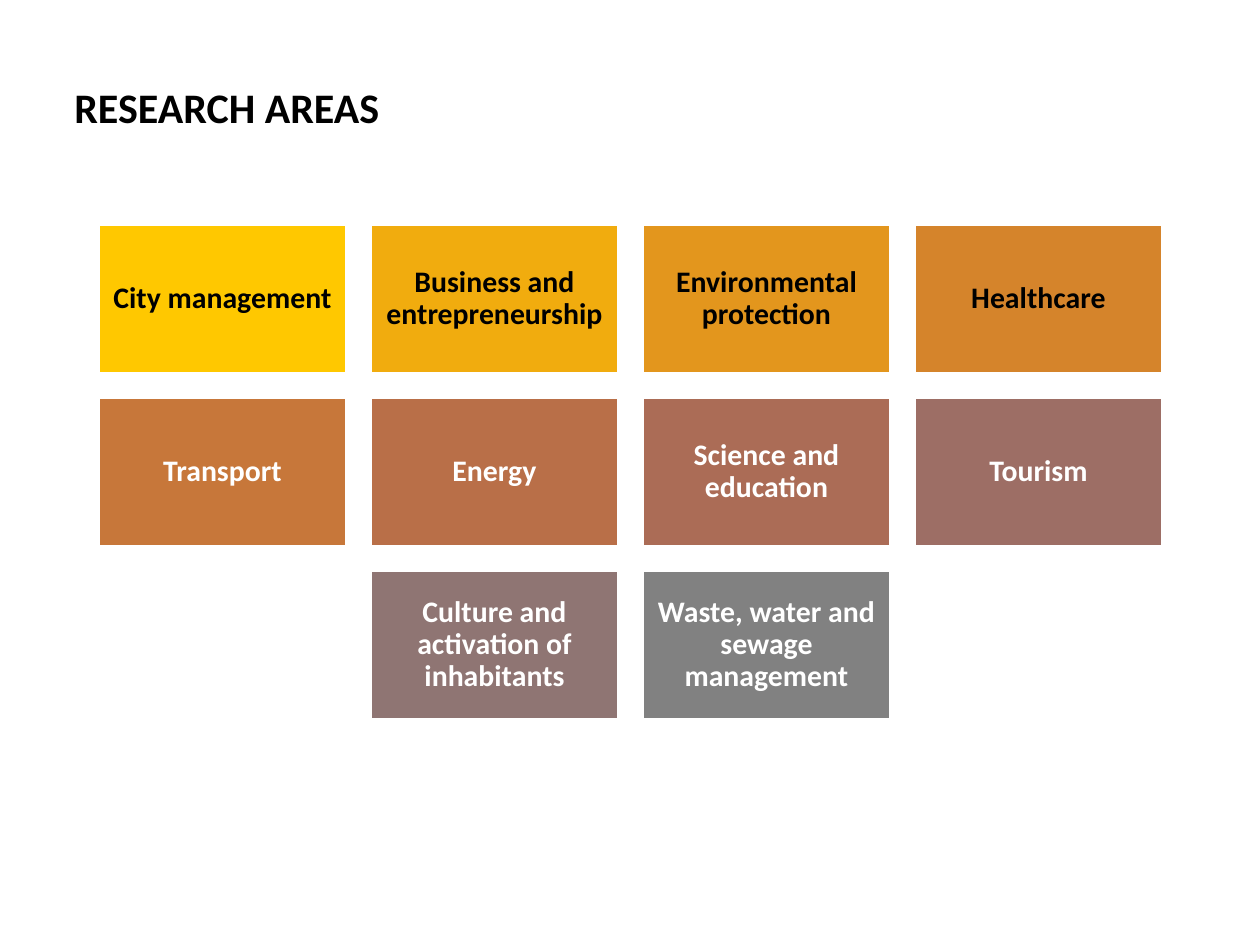
from pptx import Presentation
from pptx.dml.color import RGBColor
from pptx.enum.shapes import MSO_SHAPE
from pptx.enum.text import MSO_ANCHOR, PP_ALIGN
from pptx.util import Emu, Pt

PX = 914400 // 126
COLORS = {"black": "000000", "white": "FFFFFF"}
COLUMNS = 4
LEFT, TOP = 99, 225
CARD_W, CARD_H = 247, 148
STEP_X, STEP_Y = 272, 173
INSET = 9

AREAS = [
    ("City management", "FFC800", "black"),
    ("Business and entrepreneurship", "F1AC0E", "black"),
    ("Environmental protection", "E3961D", "black"),
    ("Healthcare", "D5842B", "black"),
    ("Transport", "C7773A", "white"),
    ("Energy", "B96F48", "white"),
    ("Science and education", "AB6C56", "white"),
    ("Tourism", "9D6E65", "white"),
    ("Culture and activation of inhabitants", "8F7573", "white"),
    ("Waste, water and sewage management", "818181", "white"),
]


def px(n):
    return Emu(round(n * PX))


def write(tf, text, size, color, spacing):
    tf.word_wrap = True
    tf.text = text
    p = tf.paragraphs[0]
    p.line_spacing = spacing
    font = p.runs[0].font
    font.name, font.size, font.bold = "Calibri", Pt(size), True
    font.color.rgb = RGBColor.from_string(COLORS[color])
    return p


prs = Presentation()
prs.slide_width, prs.slide_height = px(1260), px(945)
s = prs.slides.add_slide(prs.slide_layouts[6])

title = s.shapes.add_textbox(px(62), px(69), px(1164), px(64))
write(title.text_frame, "RESEARCH AREAS", 24, "black", 1.13)

for i, (name, fill, text_color) in enumerate(AREAS):
    row, col = divmod(i, COLUMNS)
    in_row = min(COLUMNS, len(AREAS) - row * COLUMNS)
    col += (COLUMNS - in_row) / 2  # centre a short last row
    sp = s.shapes.add_shape(MSO_SHAPE.RECTANGLE, px(LEFT + col * STEP_X),
                            px(TOP + row * STEP_Y), px(CARD_W), px(CARD_H))
    sp.shadow.inherit = False
    sp.fill.solid()
    sp.fill.fore_color.rgb = RGBColor.from_string(fill)
    sp.line.color.rgb = RGBColor.from_string(COLORS["white"])
    sp.line.width = Pt(1)
    tf = sp.text_frame
    tf.vertical_anchor = MSO_ANCHOR.MIDDLE
    tf.margin_left = tf.margin_right = px(INSET)
    tf.margin_top = tf.margin_bottom = px(INSET)
    p = write(tf, name, 17, text_color, 0.9)
    p.alignment = PP_ALIGN.CENTER

prs.save("out.pptx")
